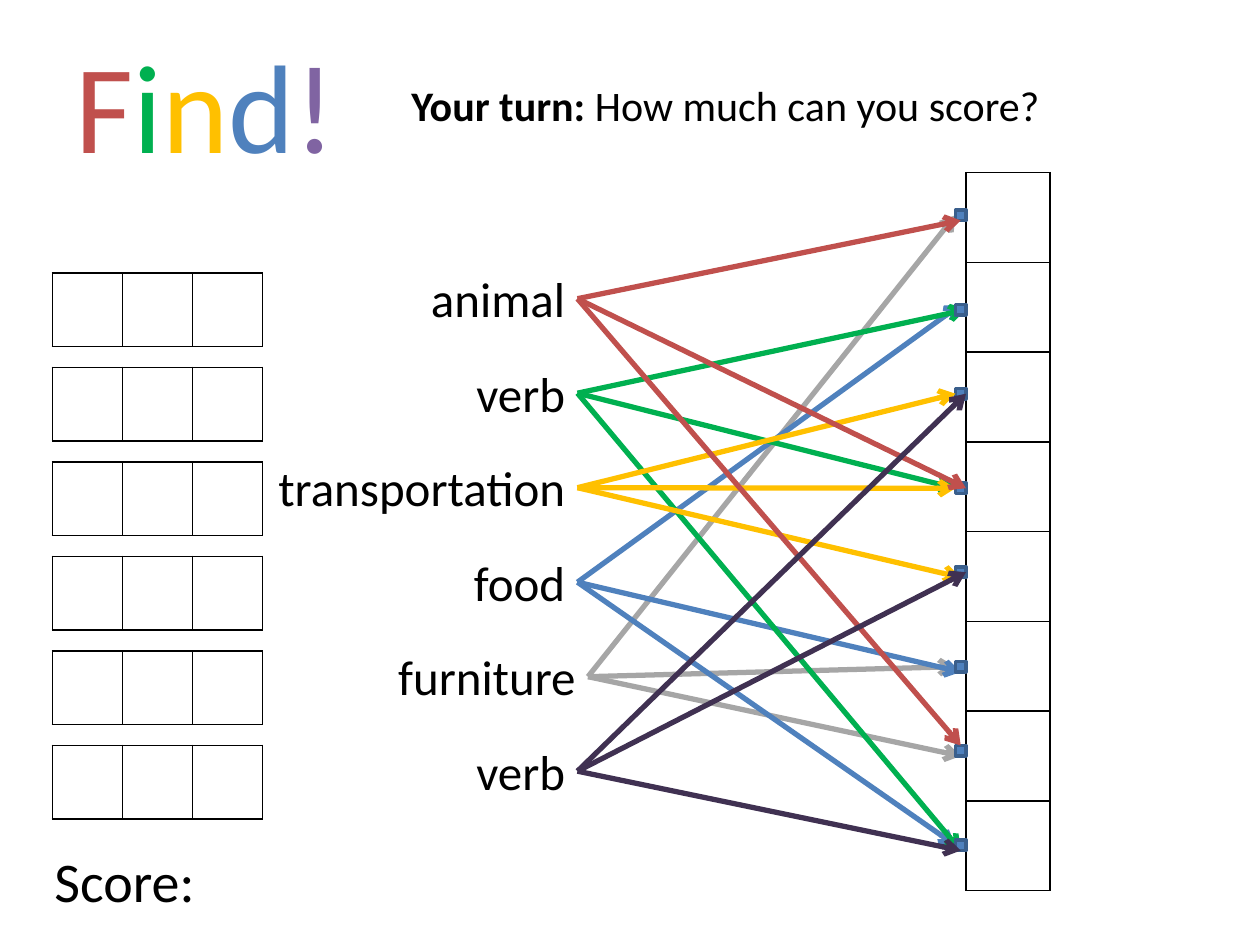
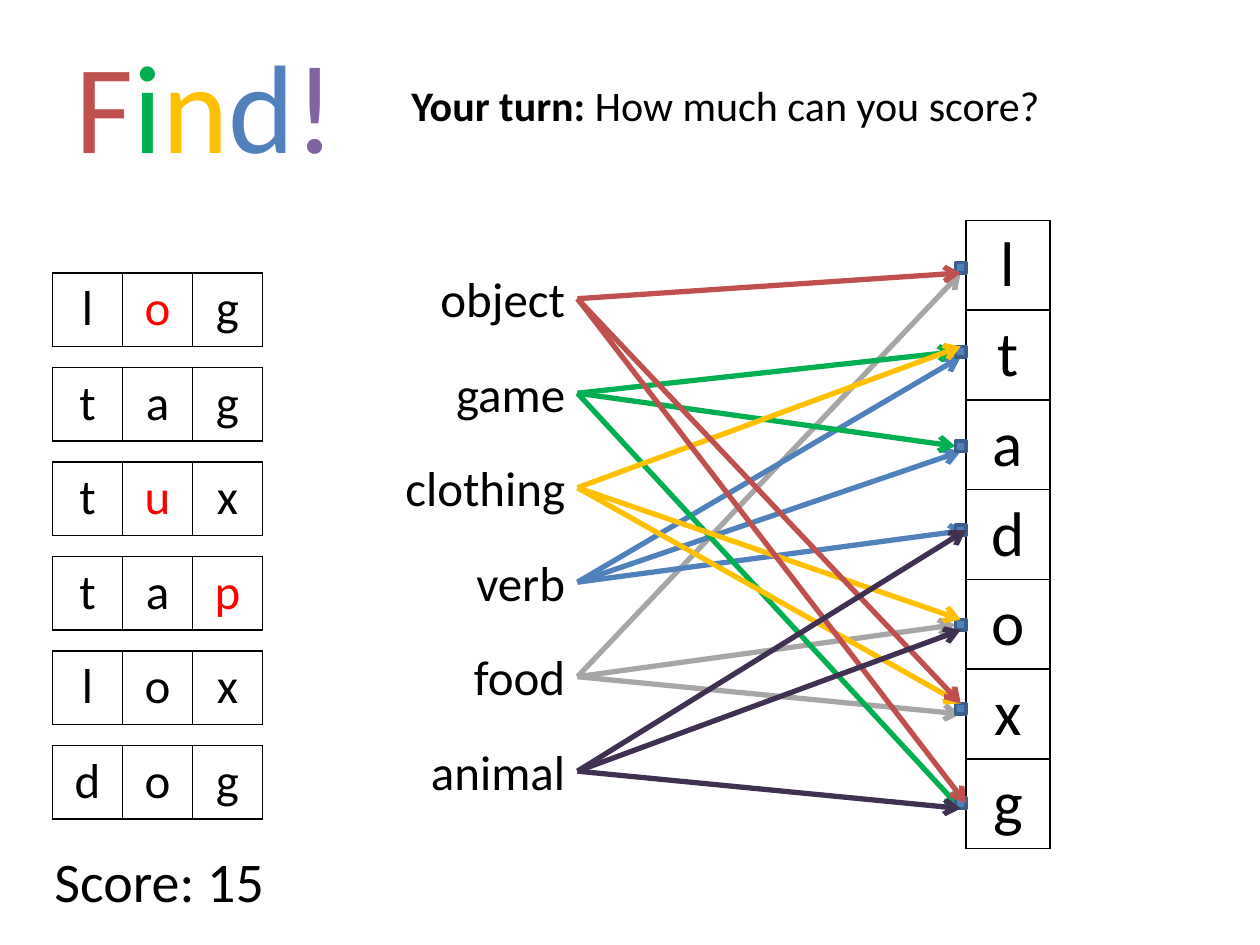
from math import floor
from lxml.etree import SubElement
from pptx import Presentation
from pptx.dml.color import RGBColor
from pptx.enum.shapes import MSO_CONNECTOR, MSO_SHAPE
from pptx.enum.text import MSO_AUTO_SIZE, PP_ALIGN
from pptx.oxml import parse_xml
from pptx.oxml.ns import nsdecls, qn
from pptx.util import Inches, Pt

FONT = "Calibri"
BLACK, RED, BLUE, EDGE = "000000", "FF0000", "4F81BD", "3A5F8C"
TITLE = [("F", "C0504D"), ("i", "00B050"), ("n", "FFC000"), ("d", BLUE), ("!", "8064A2")]
HUES = ["C0504D", "00B050", "FFC000", BLUE, "A6A6A6", "403152"]
UNDER, OVER = (4, 3, 1), (2, 0, 5)
SIDES = {"T": (0.5, 0), "L": (0, 0.5), "B": (0.5, 1), "R": (1, 0.5)}
STEP, PEG_X, PEG_GAP = 9, 91, 8.5

# Each clue: word, right edge, box width, then peg number and side of each arrow.
BLANK = {
    "clues": [
        ("animal", 55, 18, "0B 3R 6T"),
        ("verb", 55, 14, "1R 3L 7B"),
        ("transportation", 55, 33, "2L 3L 4B"),
        ("food", 55, 13, "1T 5B 7L"),
        ("furniture", 56, 25, "0L 5L 6B"),
        ("verb", 55, 15, "2R 4R 7B"),
    ],
    "words": [" " * 3] * 6, "letters": " " * 8,
    "top": 16.45, "peg": 20.5, "score": "Score:",
}
SOLVED = {
    "clues": [
        ("object", 55, 18, "0B 5T 6R"),
        ("game", 55, 14, "1L 2L 6B"),
        ("clothing", 55, 33, "1T 4T 5T"),
        ("verb", 55, 17, "1B 2B 3R"),
        ("food", 55, 25, "0B 4L 5B"),
        ("animal", 55, 17, "4B 3R 6B"),
    ],
    "words": ["lOg", "tag", "tUx", "taP", "lox", "dog"], "letters": "ltadoxg",
    "top": 21, "peg": 25, "score": "Score: 15",
}


def grid(*cells):
    """Turn counts of twelfth-inch grid cells into lengths."""
    return [Inches(n / 12) for n in cells]


def tint(code):
    """Turn a hex string into a colour."""
    return RGBColor.from_string(code)


def add_run(para, text, size, hue=BLACK, bold=False):
    """Add one styled run to a paragraph."""
    run = para.add_run()
    run.text = text
    run.font.name, run.font.size, run.font.bold = FONT, Pt(size), bold
    run.font.color.rgb = tint(hue)


def add_text(slide, box, runs, size, align=PP_ALIGN.LEFT):
    """Add a text box made of (text, hue, bold) runs."""
    frame = slide.shapes.add_textbox(*grid(*box)).text_frame
    frame.word_wrap = True
    frame.auto_size = MSO_AUTO_SIZE.SHAPE_TO_FIT_TEXT
    para = frame.paragraphs[0]
    para.alignment = align
    for text, *style in runs:
        add_run(para, text, size, *style)


def frame_cell(cell):
    """Give a cell thin black borders and no fill."""
    props = cell._tc.get_or_add_tcPr()
    for side in "LRTB":
        props.append(parse_xml(
            f'<a:ln{side} {nsdecls("a")} w="{Pt(1)}"><a:solidFill>'
            f'<a:srgbClr val="{BLACK}"/></a:solidFill></a:ln{side}>'))
    cell.fill.background()


def add_cells(slide, left, top, wide, high, rows, size):
    """Add a table with one letter per cell; capitals mark red letters."""
    count = len(rows[0])
    box = grid(left, top, wide * count, high * len(rows))
    table = slide.shapes.add_table(len(rows), count, *box).table
    table.first_row = table.horz_banding = False
    for r, row in enumerate(rows):
        for c, char in enumerate(row):
            cell = table.cell(r, c)
            frame_cell(cell)
            if char.strip():
                para = cell.text_frame.paragraphs[0]
                para.alignment = PP_ALIGN.CENTER
                add_run(para, char.lower(), size, RED if char.isupper() else BLACK)


def add_peg(slide, top):
    """Add one small blue square beside the letter column."""
    peg = slide.shapes.add_shape(MSO_SHAPE.RECTANGLE, *grid(PEG_X, top, 1, 1))
    peg.shadow.inherit = False
    peg.fill.solid()
    peg.fill.fore_color.rgb = tint(BLUE)
    peg.line.color.rgb = tint(EDGE)
    peg.line.width = Pt(2)


def add_arrow(slide, start, end, hue):
    """Add an arrow between two grid points."""
    arrow = slide.shapes.add_connector(MSO_CONNECTOR.STRAIGHT, *grid(*start, *end))
    arrow.line.color.rgb = tint(hue)
    arrow.line.width = Pt(3)
    SubElement(arrow.get_or_add_ln(), qn("a:tailEnd"), type="arrow")
    SubElement(arrow._element.spPr, qn("a:effectLst"))


def add_clue(slide, clue, row, pegs):
    """Add a clue word and its arrows to the pegs."""
    word, right, wide, ends = clue
    box = (right - wide, 25 + STEP * row, wide, 6.87)
    add_text(slide, box, [(word,)], 28, PP_ALIGN.RIGHT)
    for peg, side in ends.split():
        dx, dy = SIDES[side]
        end = (PEG_X + dx, pegs[int(peg)] + dy)
        add_arrow(slide, (right, 28.45 + STEP * row), end, HUES[row])


def add_game(deck, game):
    """Add one slide of the word game."""
    slide = deck.slides.add_slide(deck.slide_layouts[6])
    pegs = [floor(game["peg"] + PEG_GAP * i) for i in range(len(game["letters"]))]
    add_cells(slide, 92, game["top"], 8, 8.55, game["letters"], 36)
    for row, word in enumerate(game["words"]):
        add_cells(slide, 5, 26 + STEP * row, 20 / 3, 7, [word], 28)
    for row in UNDER:
        add_clue(slide, game["clues"][row], row, pegs)
    for top in pegs:
        add_peg(slide, top)
    for row in OVER:
        add_clue(slide, game["clues"][row], row, pegs)
    add_text(slide, (6, 2, 31, 15.75), TITLE, 72)
    add_text(slide, (4, 80, 60, 7.7), [(game["score"],)], 32)
    prompt = [("Your turn: ", BLACK, True), ("How much can you score?",)]
    add_text(slide, (38, 7, 66, 6), prompt, 24)


def main():
    """Build and save the deck."""
    deck = Presentation()
    deck.slide_width, deck.slide_height = grid(120, 90)
    for game in (BLANK, SOLVED):
        add_game(deck, game)
    deck.save("out.pptx")


if __name__ == "__main__":
    main()
